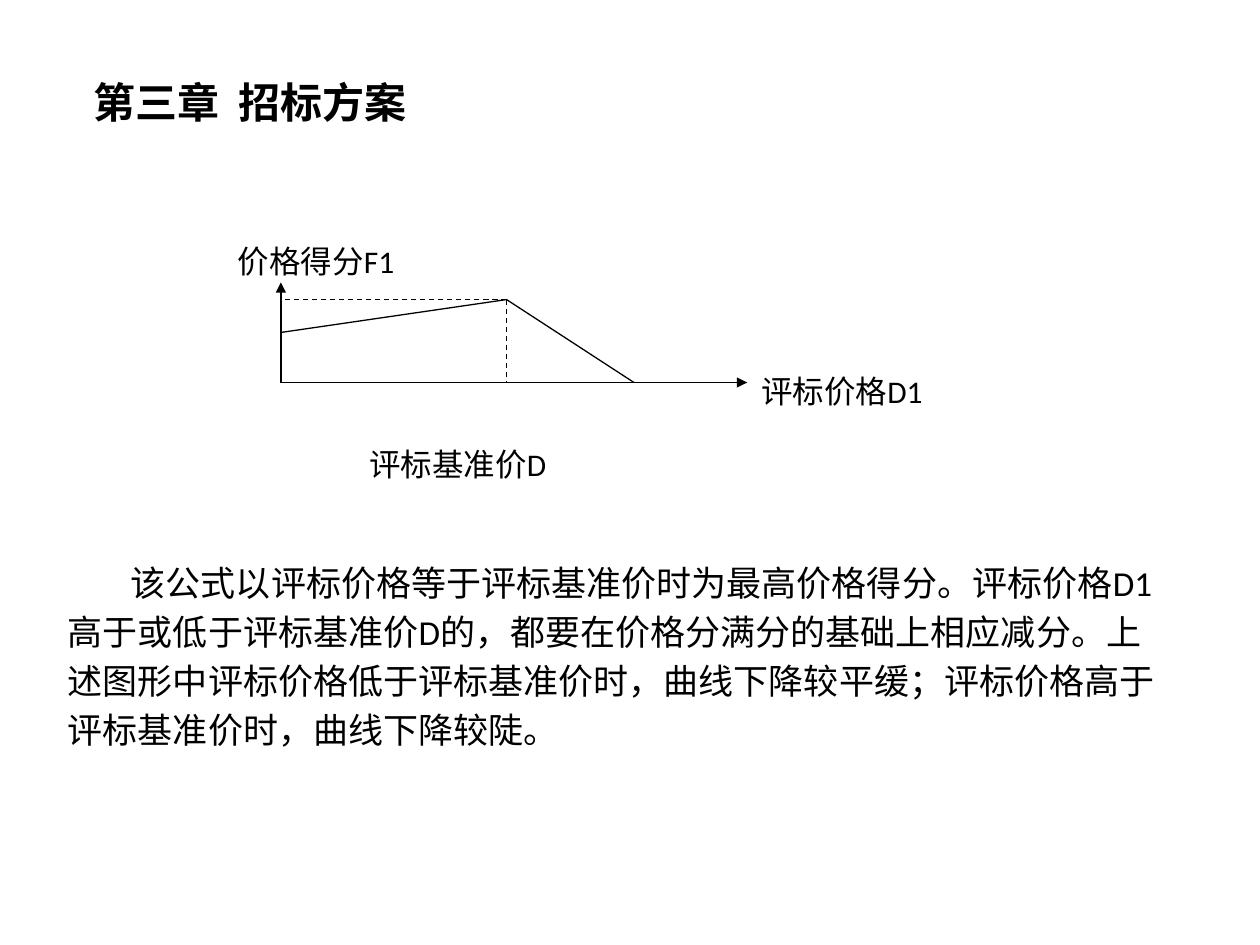
from dataclasses import dataclass

from lxml import etree
from pptx import Presentation
from pptx.dml.color import RGBColor
from pptx.enum import dml, shapes, text
from pptx.oxml import ns
from pptx.util import Pt


@dataclass(frozen=True)
class Theme:
    ink: RGBColor = RGBColor(0, 0, 0)
    title_font: str = "Arial"
    body_font: str = "Calibri"
    title_size: float = 24
    body_size: float = 20
    label_size: float = 18
    line_width: float = 0.75


class SlideBuilder:
    def __init__(self, s, theme):
        self.s = s
        self.theme = theme

    def apply(self, target, values):
        for name, value in values.items():
            setattr(target, name, value)

    def place(self, sp, box):
        names = ("left", "top", "width", "height")
        self.apply(sp, dict(zip(names, map(Pt, box))))

    def fill_text(self, sp, words, size, font, inset=(7.2, 3.6), bold=False):
        tf = sp.text_frame
        across, down = map(Pt, inset)
        self.apply(tf, {
            "word_wrap": True, "auto_size": text.MSO_AUTO_SIZE.NONE,
            "vertical_anchor": text.MSO_ANCHOR.TOP,
            "margin_left": across, "margin_right": across,
            "margin_top": down, "margin_bottom": down,
        })
        p = tf.paragraphs[0]
        p.alignment = text.PP_ALIGN.LEFT
        r = p.add_run()
        r.text = words
        self.apply(r.font, {"name": font, "size": Pt(size), "bold": bold})
        r.font.color.rgb = self.theme.ink
        return p

    def title(self, words, box):
        sp = self.s.shapes.title
        self.place(sp, box)
        self.fill_text(sp, words, self.theme.title_size, self.theme.title_font, bold=True)

    def body(self, words, box, spacing, indent):
        sp = self.s.shapes.add_textbox(*map(Pt, box))
        p = self.fill_text(sp, words, self.theme.body_size, self.theme.body_font)
        p.line_spacing = Pt(spacing)
        p._p.get_or_add_pPr().set("indent", str(Pt(indent)))

    def label(self, words, box):
        sp = self.s.shapes.add_textbox(*map(Pt, box))
        self.fill_text(sp, words, self.theme.label_size, self.theme.body_font, inset=(0, 0))

    def line(self, start, end, dashed=False, arrow=False):
        sp = self.s.shapes.add_connector(
            shapes.MSO_CONNECTOR.STRAIGHT, *map(Pt, start + end))
        sp.line.color.rgb = self.theme.ink
        sp.line.width = Pt(self.theme.line_width)
        if dashed:
            sp.line.dash_style = dml.MSO_LINE.DASH
        if arrow:
            etree.SubElement(sp.line._get_or_add_ln(), ns.qn("a:tailEnd"), type="triangle")
        etree.SubElement(sp._element.spPr, ns.qn("a:effectLst"))


def main():
    prs = Presentation()
    prs.slide_width, prs.slide_height = Pt(720), Pt(540)
    s = prs.slides.add_slide(prs.slide_layouts[5])
    slide = SlideBuilder(s, Theme())

    slide.title("第三章  招标方案", (46, 40.3, 257, 36))
    slide.body(
        "该公式以评标价格等于评标基准价时为最高价格得分。评标价格D1高于或低于评标基准价D的，"
        "都要在价格分满分的基础上相应减分。上述图形中评标价格低于评标基准价时，曲线下降较平缓；"
        "评标价格高于评标基准价时，曲线下降较陡。",
        (31.7, 313.2, 643.7, 120.2), spacing=28, indent=36)

    origin_x, origin_y = origin = (160.5, 218.6)
    peak_x, peak_y = peak = (289.5, 171.2)
    slide.line(origin, (origin_x, 161.3), arrow=True)
    slide.line(origin, (427, origin_y), arrow=True)
    slide.line((origin_x, 190), peak)
    slide.line(peak, (362.3, origin_y))
    slide.line(peak, (peak_x, origin_y), dashed=True)
    slide.line(peak, (origin_x, peak_y), dashed=True)

    slide.label("评标价格D1", (435, 212.4, 137, 42))
    slide.label("价格得分F1", (136, 138.2, 127.5, 65.5))
    slide.label("评标基准价D", (211, 254.2, 142, 52))

    prs.save("out.pptx")


if __name__ == "__main__":
    main()
